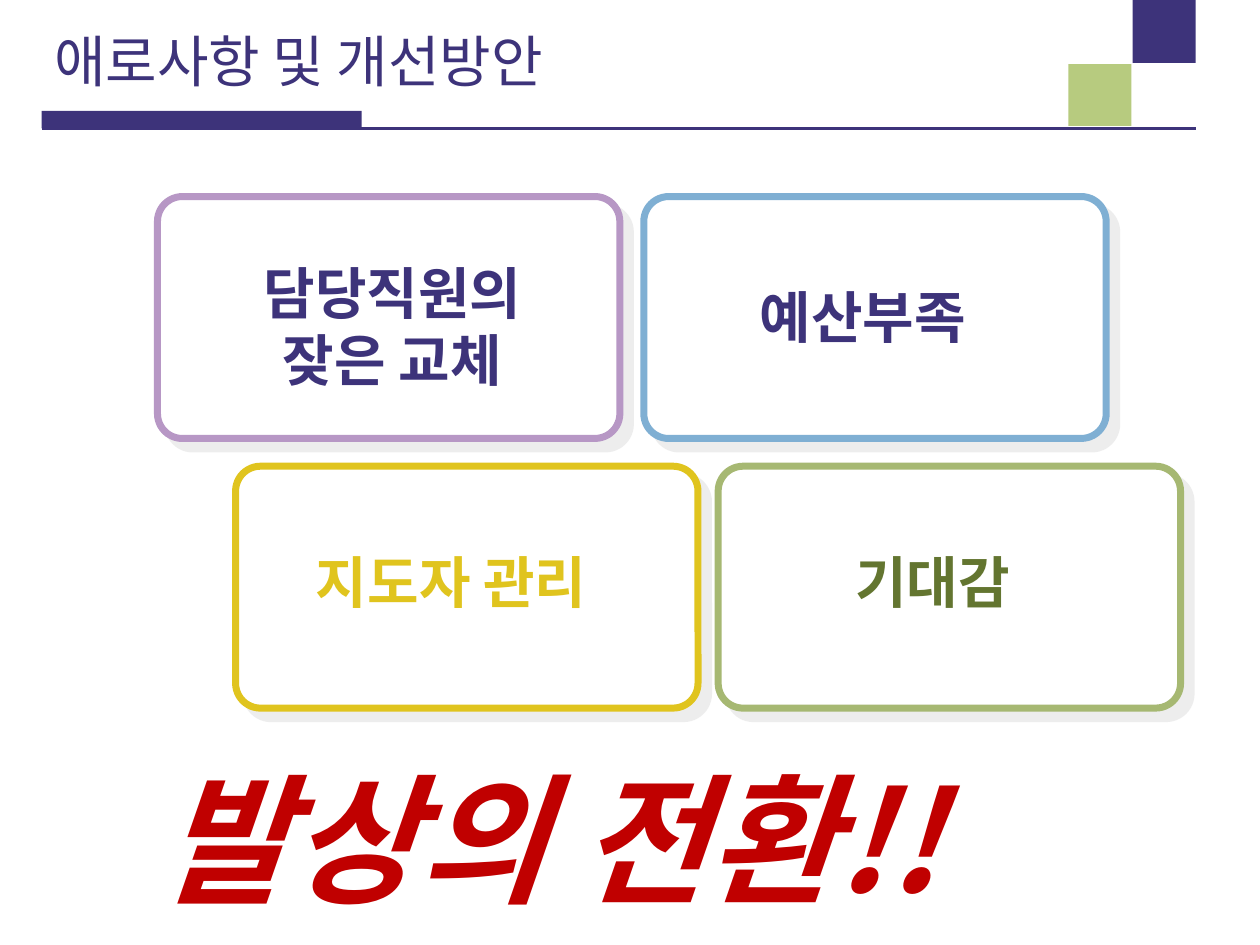
from dataclasses import dataclass

from lxml.etree import SubElement
from pptx import Presentation
from pptx.dml.color import RGBColor
from pptx.enum.shapes import MSO_CONNECTOR, MSO_SHAPE
from pptx.enum.text import MSO_ANCHOR, PP_ALIGN
from pptx.oxml.ns import qn
from pptx.util import Inches, Pt

FONT = "Noto Sans CJK KR"
NAVY = "3D337A"
LIME = "B7CB7F"
CARD_WIDTH, CARD_HEIGHT = 3.67, 1.92


@dataclass
class Box:
    left: float
    top: float
    width: float
    height: float

    def lengths(self):
        return [Inches(v) for v in (self.left, self.top, self.width, self.height)]


@dataclass
class Card:
    left: float
    top: float
    border: str
    text: str
    text_color: str
    text_box: Box
    align: PP_ALIGN = PP_ALIGN.LEFT


CARDS = [
    Card(5.11, 1.56, "7FAFD3", "예산부족", NAVY, Box(5.93, 2.19, 2.19, 0.64)),
    Card(1.25, 1.56, "B797C5", "담당직원의 잦은 교체", NAVY,
         Box(1.78, 2, 2.67, 1.18), PP_ALIGN.CENTER),
    Card(5.7, 3.7, "A6B872", "기대감", "637530", Box(6.69, 4.3, 1.9, 0.64)),
    Card(1.87, 3.7, "E0C41E", "지도자 관리", "E0C41E", Box(2.41, 4.3, 2.66, 0.64)),
]
BLOCKS = [
    (Box(0.33, 0.88, 2.54, 0.14), NAVY),
    (Box(8.48, 0.51, 0.5, 0.49), LIME),
    (Box(8.99, 0, 0.5, 0.5), NAVY),
]


def rgb(value: str) -> RGBColor:
    return RGBColor.from_string(value)


def write_text(shape, text: str, *, color: str, size: float = 32, bold: bool = False,
               italic: bool = False, align: PP_ALIGN = PP_ALIGN.LEFT,
               anchor: MSO_ANCHOR = MSO_ANCHOR.TOP) -> None:
    frame = shape.text_frame
    frame.word_wrap = True
    frame.vertical_anchor = anchor
    paragraph = frame.paragraphs[0]
    paragraph.alignment = align
    run = paragraph.add_run()
    run.text = text
    font = run.font
    font.name, font.size = FONT, Pt(size)
    font.bold, font.italic = bold, italic
    font.color.rgb = rgb(color)
    east_asian = SubElement(run._r.get_or_add_rPr(), qn("a:ea"))
    east_asian.set("typeface", FONT)


def add_text(slide, box: Box, text: str, **text_format) -> None:
    write_text(slide.shapes.add_textbox(*box.lengths()), text, **text_format)


def add_block(slide, box: Box, color: str) -> None:
    shape = slide.shapes.add_shape(MSO_SHAPE.RECTANGLE, *box.lengths())
    shape.shadow.inherit = False
    shape.fill.solid()
    shape.fill.fore_color.rgb = rgb(color)
    shape.line.fill.background()


def add_rule(slide, left: float, right: float, top: float) -> None:
    rule = slide.shapes.add_connector(
        MSO_CONNECTOR.STRAIGHT, Inches(left), Inches(top), Inches(right), Inches(top))
    rule.line.color.rgb = rgb(NAVY)
    rule.line.width = Pt(1.5)
    SubElement(rule._element.spPr, qn("a:effectLst"))


def add_soft_shadow(shape) -> None:
    """Cast a half-transparent grey shadow down and to the right."""
    shape.shadow.inherit = False
    effects = shape._element.spPr.find(qn("a:effectLst"))
    shadow = SubElement(effects, qn("a:outerShdw"), blurRad="0", dist=str(Pt(8.5)),
                        dir=str(45 * 60000), algn="ctr", rotWithShape="0")
    color = SubElement(shadow, qn("a:srgbClr"), val="DDDDDD")
    SubElement(color, qn("a:alpha"), val="50000")


def add_card(slide, card: Card) -> None:
    box = Box(card.left, card.top, CARD_WIDTH, CARD_HEIGHT)
    shape = slide.shapes.add_shape(MSO_SHAPE.ROUNDED_RECTANGLE, *box.lengths())
    shape.adjustments[0] = 0.103
    shape.fill.solid()
    shape.fill.fore_color.rgb = rgb("FFFFFF")
    shape.line.color.rgb = rgb(card.border)
    shape.line.width = Pt(4)
    add_soft_shadow(shape)
    add_text(slide, card.text_box, card.text, color=card.text_color, bold=True,
             align=card.align)


def main() -> None:
    presentation = Presentation()
    presentation.slide_width, presentation.slide_height = Inches(10), Inches(7.5)
    slide = presentation.slides.add_slide(presentation.slide_layouts[5])

    for box, color in BLOCKS:
        add_block(slide, box, color)
    add_rule(slide, 0.33, 9.49, 1.02)

    title = slide.shapes.title
    title.left, title.top, title.width, title.height = Box(0.33, 0.17, 6.75, 0.62).lengths()
    write_text(title, "애로사항 및 개선방안", color=NAVY, anchor=MSO_ANCHOR.MIDDLE)

    for card in CARDS:
        add_card(slide, card)
    add_text(slide, Box(1.17, 5.92, 7.34, 1.45), "발상의 전환!!", color="C00000",
             size=80, bold=True, italic=True)

    presentation.save("out.pptx")


if __name__ == "__main__":
    main()
